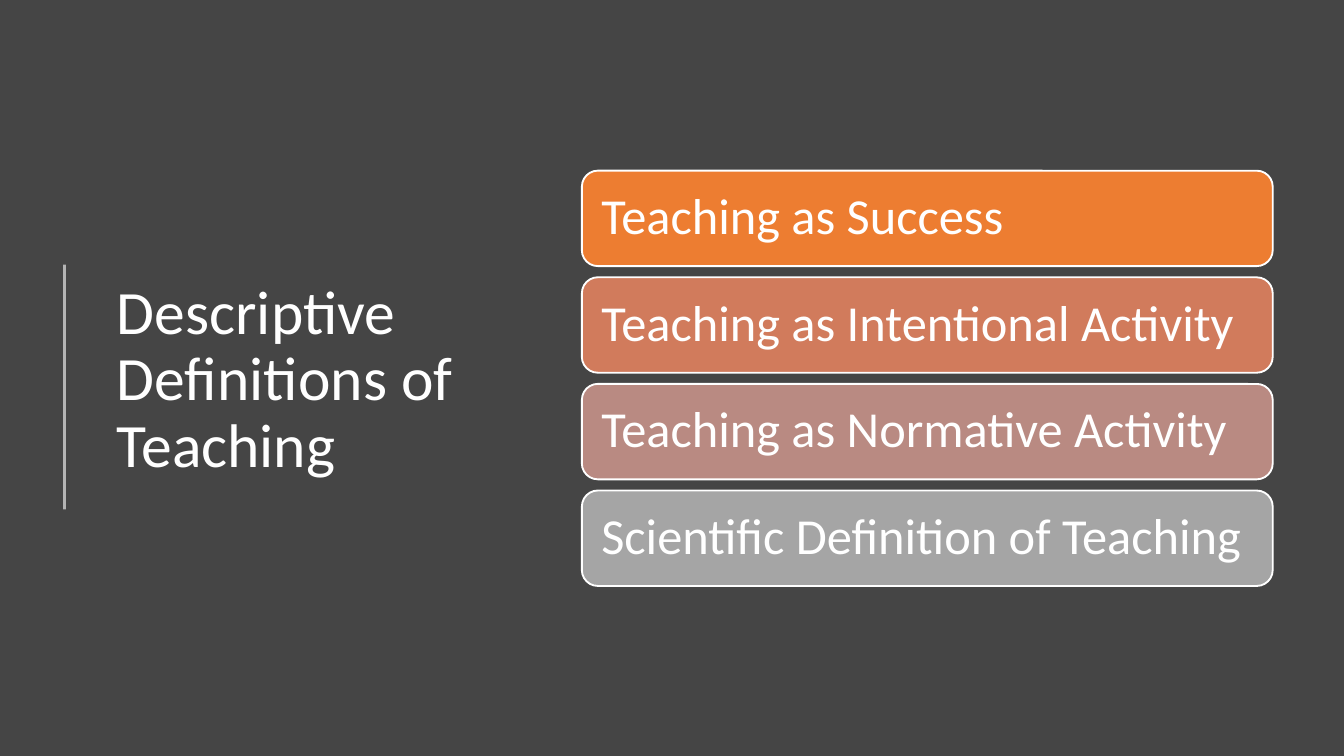
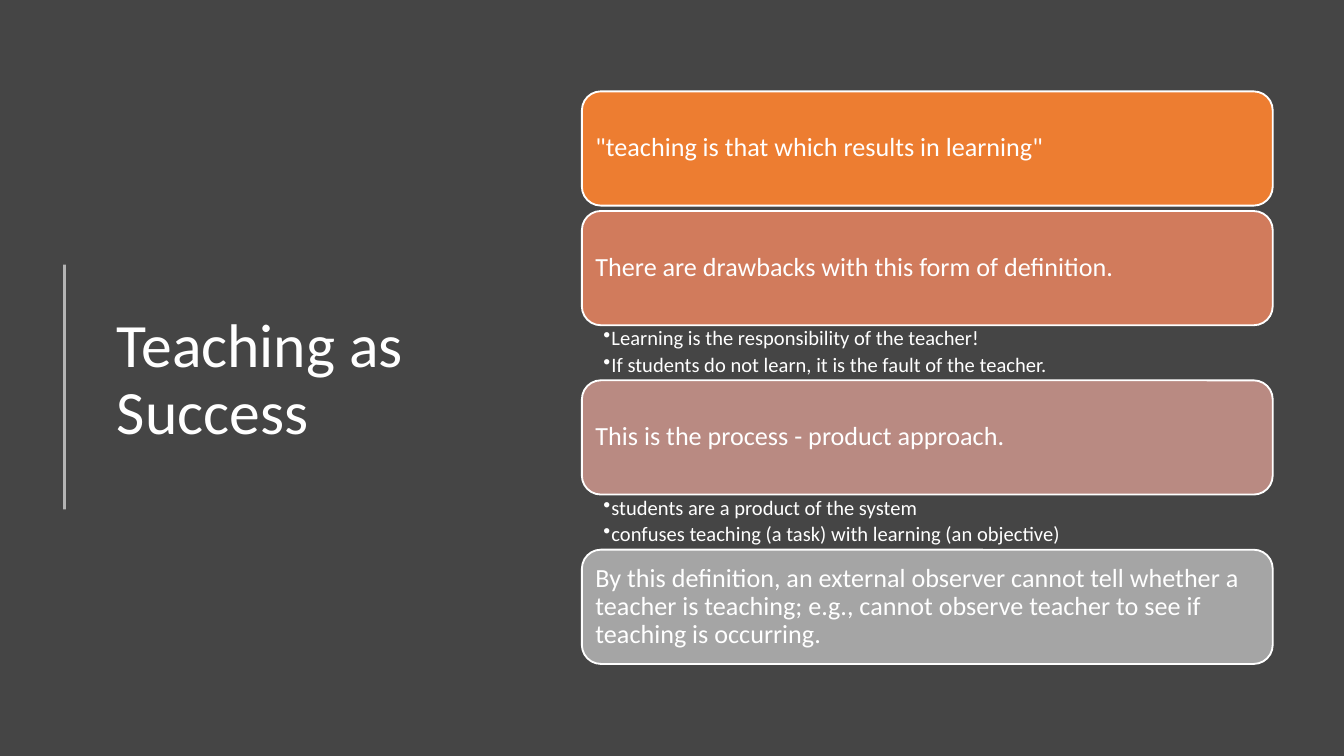
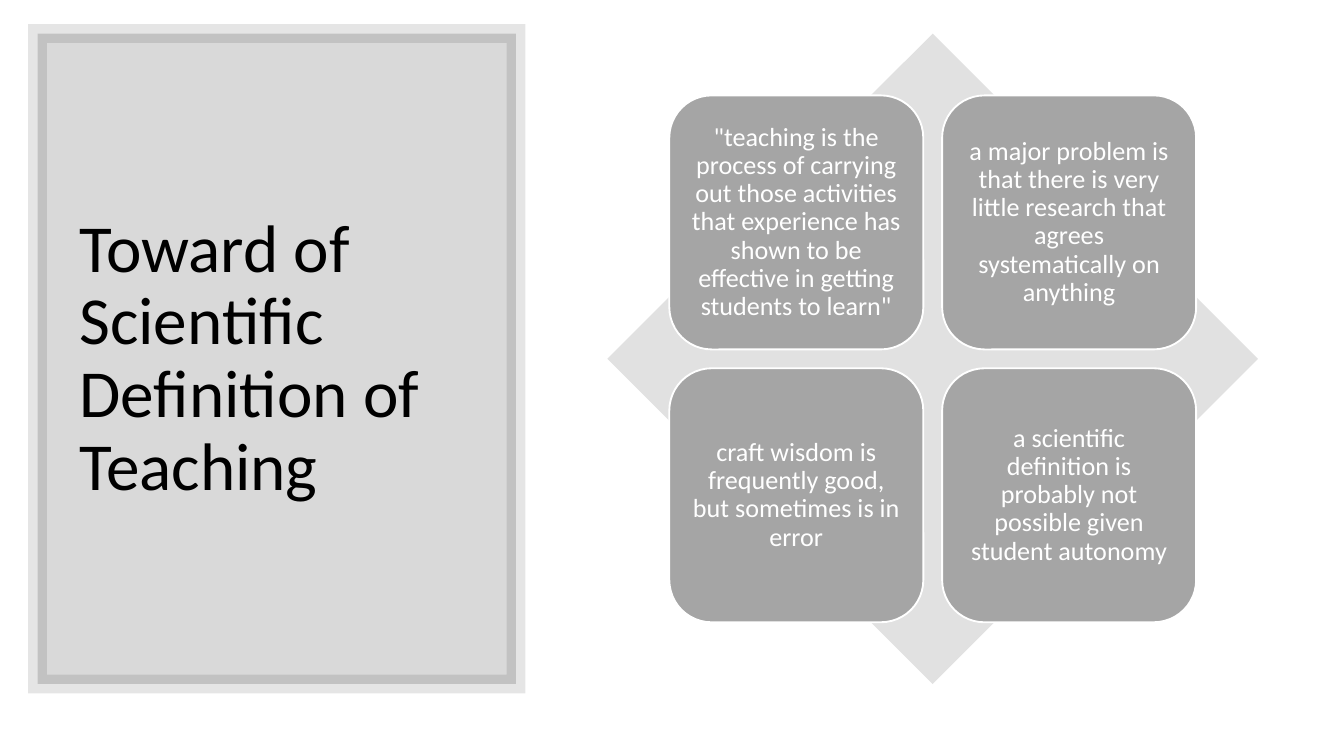
import pptx
import pptx.dml.color
import pptx.enum.shapes
import pptx.enum.text
import pptx.oxml.ns
import pptx.util
from lxml import etree

Inches, Pt = pptx.util.Inches, pptx.util.Pt
SHAPE = pptx.enum.shapes.MSO_SHAPE
ALIGN = pptx.enum.text.PP_ALIGN
ANCHOR = pptx.enum.text.MSO_ANCHOR
qn = pptx.oxml.ns.qn

FONT = "Calibri"
COLORS = {
    "dark": "454545", "white": "FFFFFF", "black": "000000",
    "orange": "ED7D31", "terracotta": "D17B5C", "rose": "B98A82",
    "gray": "A5A5A5", "diamond": "E1E1E1",
}
BAND_COLORS = ["orange", "terracotta", "rose", "gray"]


def paint(fill, color, opacity=100):
    """Make a fill solid in a named colour, with opacity in percent."""
    fill.solid()
    fill.fore_color.rgb = pptx.dml.color.RGBColor.from_string(COLORS[color])
    if opacity < 100:
        solid = fill._xPr.find(qn("a:solidFill"))
        etree.SubElement(solid[0], qn("a:alpha")).set("val", str(opacity * 1000))


def write(shape, lines, size, color, insets, align=ALIGN.LEFT, anchor=ANCHOR.MIDDLE, after=0.0):
    """Fill a shape with paragraphs; insets are left, top, right, bottom and after is a share of size."""
    frame = shape.text_frame
    frame.text = "\n".join(lines)
    frame.word_wrap = True
    frame.auto_size = pptx.enum.text.MSO_AUTO_SIZE.NONE
    frame.vertical_anchor = anchor
    (frame.margin_left, frame.margin_top,
     frame.margin_right, frame.margin_bottom) = [Inches(inset) for inset in insets]
    for paragraph in frame.paragraphs:
        paragraph.alignment = align
        paragraph.line_spacing = 0.9
        paragraph.space_after = Pt(round(size * after, 1))
        paragraph.font.name = FONT
        paragraph.font.size = Pt(size)
        paint(paragraph.font.fill, color)


prs = pptx.Presentation()
prs.slide_width = Inches(10)
prs.slide_height = prs.slide_width * 9 // 16
title_only = prs.slide_layouts[5]
TITLE_INSETS = (0.1, 0.05, 0.1, 0.05)

# Dark slides: title, vertical rule and a stack of bands with optional notes below
STACK_LEFT, STACK_WIDTH = 4.33, 5.14
NOTES_HEIGHT = 0.41
band_slides = [
    {
        "title": "Descriptive Definitions of Teaching",
        "top": 1.27, "height": 0.71, "gap": (3.65 - 1.27) / 3 - 0.71,
        "size": 27, "inset": 0.11,
        "bands": [
            ("Teaching as Success", []),
            ("Teaching as Intentional Activity", []),
            ("Teaching as Normative Activity", []),
            ("Scientific Definition of Teaching", []),
        ],
    },
    {
        "title": "Teaching as Success",
        "top": 0.68, "height": 0.85, "gap": 0.04, "size": 14, "inset": 0.06,
        "bands": [
            ('"teaching is that which results in learning"', []),
            ("There are drawbacks with this form of definition.", [
                "Learning is the responsibility of the teacher!",
                "If students do not learn, it is the fault of the teacher.",
            ]),
            ("This is the process - product approach.", [
                "students are a product of the system",
                "confuses teaching (a task) with learning (an objective)",
            ]),
            ("By this definition, an external observer cannot tell whether a teacher is "
             "teaching; e.g., cannot observe teacher to see if teaching is occurring.", []),
        ],
    },
]

for content in band_slides:
    slide = prs.slides.add_slide(title_only)
    paint(slide.background.fill, "dark")

    title = slide.shapes.title
    title.left, title.top, title.width, title.height = map(Inches, (0.77, 0.58, 2.76, 4.51))
    write(title, [content["title"]], 33, "white", TITLE_INSETS)

    rule = slide.shapes.add_connector(
        pptx.enum.shapes.MSO_CONNECTOR.STRAIGHT,
        Inches(0.48), Inches(1.97), Inches(0.48), Inches(3.79))
    rule.line.width = Pt(1.5)
    paint(rule.line.fill, "white", 60)
    etree.SubElement(rule._element.spPr, qn("a:effectLst"))

    top = content["top"]
    for (statement, remarks), band_color in zip(content["bands"], BAND_COLORS):
        band = slide.shapes.add_shape(
            SHAPE.ROUNDED_RECTANGLE, Inches(STACK_LEFT), Inches(top),
            Inches(STACK_WIDTH), Inches(content["height"]))
        band.shadow.inherit = False
        paint(band.fill, band_color)
        paint(band.line.fill, "white")
        band.line.width = Pt(1)
        write(band, [statement], content["size"], "white", [content["inset"]] * 4, after=0.35)
        top += content["height"]

        if not remarks:
            top += content["gap"]
            continue
        notes = slide.shapes.add_textbox(
            Inches(STACK_LEFT), Inches(top), Inches(STACK_WIDTH), Inches(NOTES_HEIGHT))
        write(notes, remarks, 11, "white", (0.16, 0.02, 0.11, 0.02),
              anchor=ANCHOR.TOP, after=0.2)
        for paragraph in notes.text_frame.paragraphs:
            paragraph.level = 1
            properties = paragraph._p.get_or_add_pPr()
            properties.set("marL", str(Inches(0.06)))
            properties.set("indent", str(-Inches(0.06)))
            bullet = etree.Element(qn("a:buChar"), char="•")
            properties.find(qn("a:spcAft")).addnext(bullet)
        top += NOTES_HEIGHT

# Light slide: framed title panel and four tiles over a diamond
slide = prs.slides.add_slide(title_only)
paint(slide.background.fill, "white")

panel = slide.shapes.add_shape(
    SHAPE.RECTANGLE, Inches(0.28), Inches(0.25), Inches(3.56), Inches(4.84))
panel.shadow.inherit = False
paint(panel.fill, "black", 15)
paint(panel.line.fill, "black", 10)
panel.line.width = Pt(10)
etree.SubElement(panel.line._ln, qn("a:miter")).set("lim", "800000")

title = slide.shapes.title
title.left, title.top, title.width, title.height = map(Inches, (0.49, 0.52, 3.12, 4.31))
write(title, ["Toward of Scientific Definition of Teaching"], 36, "black", TITLE_INSETS)
panel._element.addnext(title._element)

diamond = slide.shapes.add_shape(
    SHAPE.DIAMOND, Inches(4.52), Inches(0.25), Inches(4.84), Inches(4.84))
diamond.shadow.inherit = False
paint(diamond.fill, "diamond")
diamond.line.fill.background()

TILE_SIZE, TILE_PITCH = 1.89, 2.03
findings = [
    '"teaching is the process of carrying out those activities that experience has shown '
    'to be effective in getting students to learn"',
    "a major problem is that there is very little research that agrees systematically on anything",
    "craft wisdom is frequently good, but sometimes is in error",
    "a scientific definition is probably not possible given student autonomy",
]
for index, finding in enumerate(findings):
    row, column = divmod(index, 2)
    tile = slide.shapes.add_shape(
        SHAPE.ROUNDED_RECTANGLE,
        Inches(4.98 + column * TILE_PITCH), Inches(0.71 + row * TILE_PITCH),
        Inches(TILE_SIZE), Inches(TILE_SIZE))
    tile.shadow.inherit = False
    paint(tile.fill, "gray")
    paint(tile.line.fill, "white")
    tile.line.width = Pt(1)
    write(tile, [finding], 14, "white", [0.06] * 4, align=ALIGN.CENTER, after=0.35)

prs.save("out.pptx")
